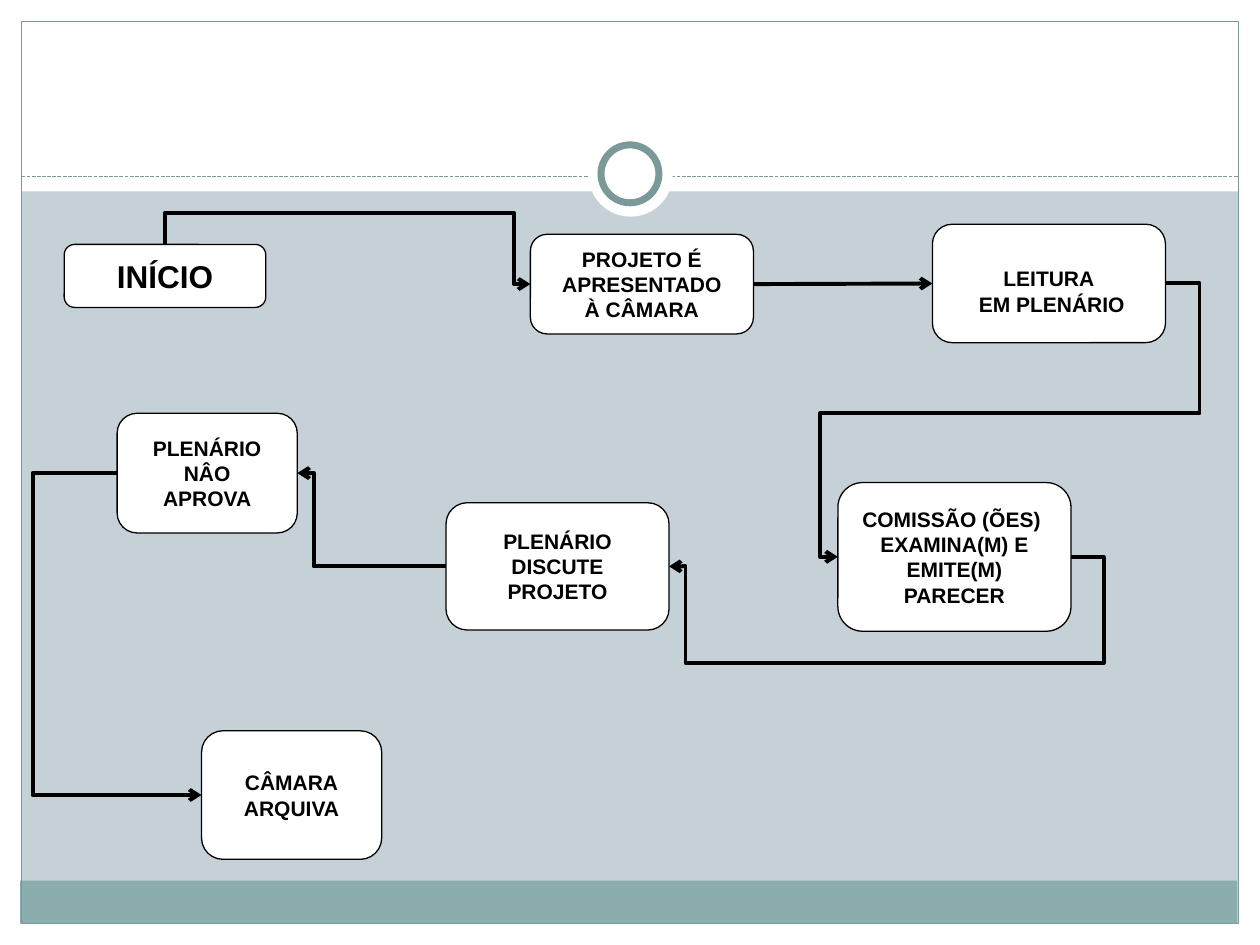
from dataclasses import dataclass

from lxml.etree import SubElement
from pptx import Presentation
from pptx.dml.color import RGBColor
from pptx.enum.dml import MSO_LINE_DASH_STYLE as Dash
from pptx.enum.shapes import MSO_AUTO_SHAPE_TYPE as ShapeType, MSO_CONNECTOR_TYPE as ConnectorType
from pptx.enum.text import MSO_VERTICAL_ANCHOR as Anchor, PP_PARAGRAPH_ALIGNMENT as Align
from pptx.oxml.ns import qn
from pptx.util import Inches, Pt


@dataclass(frozen=True)
class Theme:
    """Colours, type sizes and line widths of the slide."""
    background: str = "C5D1D7"
    white: str = "FFFFFF"
    black: str = "000000"
    band: str = "8CADAE"
    frame: str = "7C999A"
    font: str = "Arial"
    start_size: float = 18
    step_size: float = 12
    thin: float = 0.75
    arrow: float = 2.25
    ring: float = 4


THEME = Theme()
TOP, LEFT, BOTTOM, RIGHT = range(4)

MARGINS = [
    (0, 7.33, 10, 0.17),
    (0, 0, 10, 1.52),
    (0, 0, 0.17, 7.5),
    (9.83, 0, 0.17, 7.5),
]

STEPS = {
    "start": ((0.51, 1.94, 1.6, 0.5), ["INÍCIO"]),
    "submission": ((4.21, 1.86, 1.77, 0.79), ["PROJETO É", "APRESENTADO", "À CÂMARA"]),
    "reading": ((7.4, 1.78, 1.85, 0.94), ["LEITURA", " EM PLENÁRIO"]),
    "committee": ((6.65, 3.83, 1.85, 1.18),
                  ["COMISSÃO (ÕES) ", "EXAMINA(M) E", "EMITE(M)", "PARECER"]),
    "debate": ((3.54, 3.99, 1.77, 1.01), ["PLENÁRIO", "DISCUTE", "PROJETO"]),
    "rejection": ((0.93, 3.28, 1.43, 0.95), ["PLENÁRIO", "NÂO", "APROVA"]),
    "archive": ((1.6, 5.8, 1.43, 1.02), ["CÂMARA", "ARQUIVA"]),
}

ELBOWS = [
    ("archive", LEFT, "rejection", LEFT, [0.26]),
    ("rejection", RIGHT, "debate", LEFT, [2.49]),
    ("debate", RIGHT, "committee", RIGHT, [5.44, 5.26, 8.76]),
    ("committee", LEFT, "reading", RIGHT, [6.51, 3.28, 9.52]),
    ("submission", LEFT, "start", TOP, [4.08, 1.69]),
]


def color(value):
    """Turn a hex string into a colour."""
    return RGBColor.from_string(value)


def add_box(slide, kind, bounds, fill=None, line=None, width=THEME.thin):
    """Add a preset shape without shadow."""
    shape = slide.shapes.add_shape(kind, *map(Inches, bounds))
    shape.shadow.inherit = False
    if fill:
        shape.fill.solid()
        shape.fill.fore_color.rgb = color(fill)
    else:
        shape.fill.background()
    if line:
        shape.line.color.rgb = color(line)
        shape.line.width = Pt(width)
    else:
        shape.line.fill.background()
    return shape


def write_text(shape, lines, size=THEME.step_size, bold=True, ink=THEME.black, top=0.05):
    """Write centred paragraphs into a shape."""
    frame = shape.text_frame
    frame.word_wrap = False
    frame.vertical_anchor = Anchor.MIDDLE
    frame.margin_top = Inches(top)
    for index, line in enumerate(lines):
        paragraph = frame.paragraphs[0] if index == 0 else frame.add_paragraph()
        paragraph.alignment = Align.CENTER
        run = paragraph.add_run()
        run.text = line
        run.font.name = THEME.font
        run.font.size = Pt(size)
        run.font.bold = bold
        run.font.color.rgb = color(ink)


def add_line(slide, kind, start, end, ink=THEME.black, width=THEME.arrow, arrow=True):
    """Add a connector, with an arrowhead at its start if wanted."""
    connector = slide.shapes.add_connector(kind, *map(Inches, (*start, *end)))
    connector.line.color.rgb = color(ink)
    connector.line.width = Pt(width)
    if arrow:
        SubElement(connector.line._get_or_add_ln(), qn("a:headEnd"), type="arrow")
    SubElement(connector._element.spPr, qn("a:effectLst"))
    return connector


def side_middle(step, side):
    """Find the middle of one side of a step."""
    left, top, width, height = STEPS[step][0]
    across = {LEFT: 0, RIGHT: 1}.get(side, 0.5)
    down = {TOP: 0, BOTTOM: 1}.get(side, 0.5)
    return left + across * width, top + down * height


def add_elbow(slide, target, target_side, source, source_side, bends):
    """Route a bent arrow through alternating x and y positions."""
    start = side_middle(target, target_side)
    end = side_middle(source, source_side)
    connector = add_line(slide, ConnectorType.ELBOW, start, end)
    geometry = connector._element.spPr.find(qn("a:prstGeom"))
    geometry.set("prst", f"bentConnector{len(bends) + 2}")
    guides = geometry.find(qn("a:avLst"))
    for index, bend in enumerate(bends):
        axis = index % 2
        ratio = (bend - start[axis]) / (end[axis] - start[axis])
        SubElement(guides, qn("a:gd"), name=f"adj{index + 1}",
                   fmla=f"val {round(ratio * 100000)}")


def add_backdrop(slide):
    """Draw the margins, frame, divider and ring."""
    slide.background.fill.solid()
    slide.background.fill.fore_color.rgb = color(THEME.background)
    for bounds in MARGINS:
        add_box(slide, ShapeType.RECTANGLE, bounds, fill=THEME.white)
    add_box(slide, ShapeType.RECTANGLE, (0.16, 6.99, 9.66, 0.34), fill=THEME.band)
    add_box(slide, ShapeType.RECTANGLE, (0.17, 0.17, 9.66, 7.16), line=THEME.frame)
    divider = add_line(slide, ConnectorType.STRAIGHT, (0.17, 1.4), (9.83, 1.4),
                       ink=THEME.frame, width=THEME.thin, arrow=False)
    divider.line.dash_style = Dash.SQUARE_DOT
    add_box(slide, ShapeType.OVAL, (4.67, 1.05, 0.67, 0.67), fill=THEME.white)
    add_box(slide, ShapeType.OVAL, (4.77, 1.15, 0.46, 0.46), fill=THEME.white,
            line=THEME.frame, width=THEME.ring)


def add_step(slide, name):
    """Draw one step of the flow."""
    bounds, lines = STEPS[name]
    shape = add_box(slide, ShapeType.ROUNDED_RECTANGLE, bounds,
                    fill=THEME.white, line=THEME.black)
    write_text(shape, lines,
               size=THEME.start_size if name == "start" else THEME.step_size,
               top=0.17 if name == "reading" else 0.05)
    return shape


def main():
    """Build the slide and save it."""
    presentation = Presentation()
    presentation.slide_width = Inches(10)
    presentation.slide_height = Inches(7.5)
    slide = presentation.slides.add_slide(presentation.slide_layouts[6])
    add_backdrop(slide)
    for elbow in ELBOWS:
        add_elbow(slide, *elbow)
    steps = {name: add_step(slide, name) for name in STEPS}
    straight = add_line(slide, ConnectorType.STRAIGHT,
                        side_middle("reading", LEFT), side_middle("submission", RIGHT))
    straight.begin_connect(steps["reading"], LEFT)
    straight.end_connect(steps["submission"], RIGHT)
    presentation.save("out.pptx")


if __name__ == "__main__":
    main()
